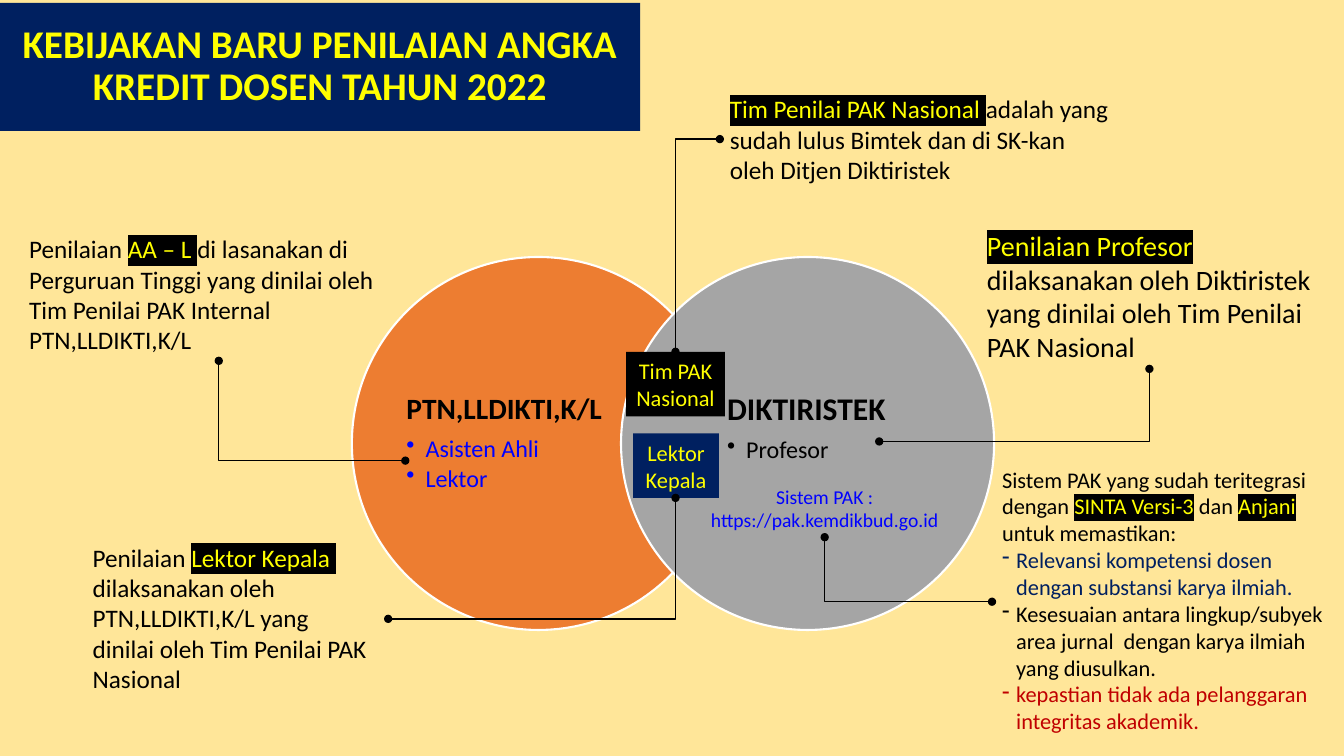
from lxml import etree
from pptx import Presentation
from pptx.dml.color import RGBColor as RGB
from pptx.enum.shapes import MSO_CONNECTOR as LINK, MSO_SHAPE as FORM
from pptx.enum.text import MSO_ANCHOR as ANCHOR, PP_ALIGN as ALIGN
from pptx.oxml.ns import qn
from pptx.util import Inches, Pt

HUE = {
    "sand": "FFE699", "navy": "002060", "orange": "ED7D31", "gray": "A5A5A5",
    "black": "000000", "white": "FFFFFF", "yellow": "FFFF00",
    "blue": "0000FF", "red": "C00000",
}


def write(par, text, size, hue, bold=False, mark=None, dent=0):
    """Fill a paragraph; text between bars is highlighted, a newline breaks the line."""
    if mark:
        props = par._p.get_or_add_pPr()
        props.set("marL", str(Inches(dent)))
        props.set("indent", str(-Inches(dent)))
        etree.SubElement(props, qn("a:buChar")).set("char", mark)
    font = par.font
    font.name, font.size, font.bold = "Calibri", Pt(size), bold
    font.color.rgb = RGB.from_string(HUE[hue])
    for i, part in enumerate(text.split("|")):
        for j, line in enumerate(part.split("\n")):
            if j:
                par.add_line_break()
            if not line:
                continue
            run = par.add_run()
            run.text = line
            if i % 2:
                run.font.color.rgb = RGB.from_string(HUE["yellow"])
                glow = etree.SubElement(run.font._element, qn("a:highlight"))
                etree.SubElement(glow, qn("a:srgbClr")).set("val", HUE["black"])


def block(form, box, fill):
    """Add a filled shape without outline or shadow, its text starting at the left."""
    shape = slide.shapes.add_shape(form, *map(Inches, box))
    shape.shadow.inherit = False
    shape.fill.solid()
    shape.fill.fore_color.rgb = RGB.from_string(HUE[fill])
    shape.line.fill.background()
    shape.text_frame.word_wrap = True
    return shape


deck = Presentation()
deck.slide_width, deck.slide_height = Inches(13.33), Inches(7.5)
slide = deck.slides.add_slide(deck.slide_layouts[6])
slide.background.fill.solid()
slide.background.fill.fore_color.rgb = RGB.from_string(HUE["sand"])

# Circles: left, fill, insets (left, right, bottom), heading, size, items, item colour
circles = [
    (3.49, "orange", (0, 0.5, 0), "PTN,LLDIKTI,K/L", 21,
     ["Asisten Ahli", "Lektor"], "blue"),
    (6.16, "gray", (0.51, 0, 0.3), "DIKTIRISTEK", 22.5, ["Profesor"], "black"),
]
for left, fill, pads, head, size, items, hue in circles:
    disc = block(FORM.OVAL, (left, 2.55, 3.7, 3.7), fill)
    disc.line.color.rgb = RGB.from_string(HUE["white"])
    disc.line.width = Pt(1.5)
    frame = disc.text_frame
    frame.vertical_anchor = ANCHOR.MIDDLE
    frame.margin_top = 0
    frame.margin_left, frame.margin_right, frame.margin_bottom = map(Inches, pads)
    par = frame.paragraphs[0]
    par.alignment, par.line_spacing, par.space_after = ALIGN.LEFT, 0.9, Pt(7.4)
    write(par, head, size, "black", bold=True)
    for item in items:
        par = frame.add_paragraph()
        par.alignment, par.line_spacing, par.space_after = ALIGN.LEFT, 0.9, Pt(2.6)
        write(par, item, 17.2, hue, mark="•", dent=0.19)

# Boxes: place, fill, lines, size, bold, line spacing
boxes = [
    ((6.28, 4.3, 0.85, 0.64), "navy", ["Lektor Kepala"], 16, False, 1),
    ((6.21, 3.49, 0.98, 0.64), "black", ["Tim PAK", "Nasional"], 16, False, 1),
    ((-0.01, 0.03, 6.36, 1.27), "navy",
     ["KEBIJAKAN BARU PENILAIAN ANGKA KREDIT DOSEN TAHUN 2022"], 28, True, 0.9),
]
for box, fill, lines, size, bold, gap in boxes:
    frame = block(FORM.RECTANGLE, box, fill).text_frame
    frame.vertical_anchor = ANCHOR.MIDDLE
    for i, line in enumerate(lines):
        par = frame.add_paragraph() if i else frame.paragraphs[0]
        par.alignment, par.line_spacing = ALIGN.CENTER, gap
        write(par, line, size, "yellow", bold)

# Notes: place, size, alignment, paragraphs (text, colour, bullet)
notes = [
    ((7.14, 0.88, 3.96, 1.01), 18, ALIGN.LEFT, [
        ("|Tim Penilai PAK Nasional |adalah yang sudah lulus Bimtek dan di SK-kan "
         "oleh Ditjen Diktiristek", "black", None)]),
    ((9.69, 2.22, 3.43, 1.45), 20, ALIGN.LEFT, [
        ("|Penilaian Profesor|\ndilaksanakan oleh Diktiristek yang dinilai oleh "
         "Tim Penilai PAK Nasional", "black", None)]),
    ((0.19, 2.27, 3.95, 1.31), 18, ALIGN.LEFT, [
        ("Penilaian |AA – L |di lasanakan di Perguruan Tinggi yang dinilai oleh "
         "Tim Penilai PAK Internal PTN,LLDIKTI,K/L", "black", None)]),
    ((0.82, 5.33, 3.02, 1.62), 18, ALIGN.LEFT, [
        ("Penilaian |Lektor Kepala |\ndilaksanakan oleh PTN,LLDIKTI,K/L yang \n"
         "dinilai oleh Tim Penilai PAK Nasional", "black", None)]),
    ((6.9, 4.76, 2.56, 0.57), 14, ALIGN.CENTER, [
        ("Sistem PAK :", "blue", None),
        ("https://pak.kemdikbud.go.id", "blue", None)]),
    ((9.84, 4.57, 3.49, 2.79), 16, ALIGN.LEFT, [
        ("Sistem PAK yang sudah teritegrasi dengan |SINTA Versi-3| dan |Anjani| "
         "untuk memastikan:", "black", None),
        ("Relevansi kompetensi dosen dengan substansi karya ilmiah.", "navy", "-"),
        ("Kesesuaian antara lingkup/subyek area jurnal  dengan karya ilmiah "
         "yang diusulkan.", "black", "-"),
        ("kepastian tidak ada pelanggaran integritas akademik.", "red", "-")]),
]
for box, size, side, rows in notes:
    frame = slide.shapes.add_textbox(*map(Inches, box)).text_frame
    frame.word_wrap = True
    for i, (text, hue, mark) in enumerate(rows):
        par = frame.add_paragraph() if i else frame.paragraphs[0]
        par.alignment = side
        write(par, text, size, hue, mark=mark, dent=0.14)

# Links run sideways first, then up or down
links = [
    (7.14, 1.38, 6.7, 3.49),
    (8.72, 4.38, 11.4, 3.66),
    (3.85, 6.14, 6.7, 4.94),
    (4.02, 4.57, 2.17, 3.58),
    (9.84, 5.97, 8.18, 5.33),
]
for ends in links:
    link = slide.shapes.add_connector(LINK.ELBOW, *map(Inches, ends))
    link.line.color.rgb = RGB.from_string(HUE["black"])
    link.line.width = Pt(1)
    props = link._element.spPr
    props.find(qn("a:prstGeom")).set("prst", "bentConnector2")
    for tip in ("a:headEnd", "a:tailEnd"):
        etree.SubElement(props.find(qn("a:ln")), qn(tip)).set("type", "oval")
    etree.SubElement(props, qn("a:effectLst"))

deck.save("out.pptx")
